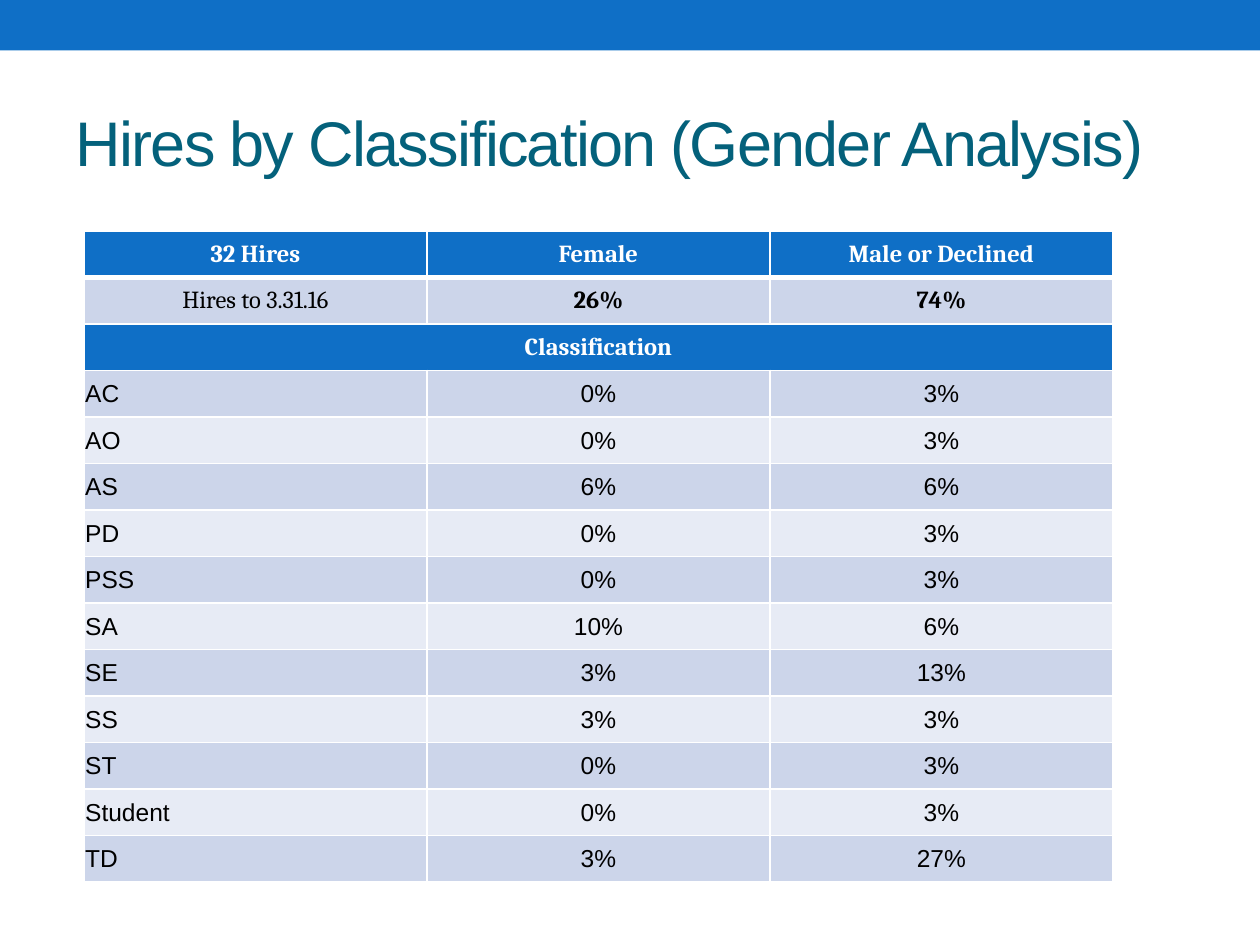
from lxml.etree import SubElement
from pptx import Presentation
from pptx.dml.color import RGBColor
from pptx.enum.shapes import MSO_SHAPE as Shape
from pptx.enum.text import MSO_ANCHOR as Anchor, PP_ALIGN as Align
from pptx.oxml.ns import qn
from pptx.util import Pt

BLUE, TEAL, WHITE, BLACK = "0F6FC6", "04617B", "FFFFFF", "000000"
BANDS = "CCD5EA", "E7EBF5"

HEAD = "32 Hires", "Female", "Male or Declined"
TOTAL = "Hires to 3.31.16", "26%", "74%"
CLASSES = [
    ("AC", "0%", "3%"),
    ("AO", "0%", "3%"),
    ("AS", "6%", "6%"),
    ("PD", "0%", "3%"),
    ("PSS", "0%", "3%"),
    ("SA", "10%", "6%"),
    ("SE", "3%", "13%"),
    ("SS", "3%", "3%"),
    ("ST", "0%", "3%"),
    ("Student", "0%", "3%"),
    ("TD", "3%", "27%"),
]


def rgb(color):
    return RGBColor.from_string(color)


def edge(cell, side, width):
    """Draw one white border (side L, R, T or B); call before filling the cell."""
    line = SubElement(cell._tc.get_or_add_tcPr(), qn(f"a:ln{side}"), w=str(Pt(width)))
    SubElement(SubElement(line, qn("a:solidFill")), qn("a:srgbClr"), val=WHITE)


class Deck:
    """Holds the style and the current slide."""

    sans, serif = "Arial", "Cambria"
    size = 14

    def __init__(self, slide):
        self.slide = slide

    def add_text(self, para, text, size, font, color, bold=False):
        run = para.add_run()
        run.text = text
        run.font.size = Pt(size)
        run.font.name = font
        run.font.bold = bold
        run.font.color.rgb = rgb(color)
        return run

    def bar(self, left, top, width, height, color):
        bar = self.slide.shapes.add_shape(
            Shape.RECTANGLE, Pt(left), Pt(top), Pt(width), Pt(height))
        bar.shadow.inherit = False
        bar.fill.solid()
        bar.fill.fore_color.rgb = rgb(color)
        bar.line.fill.background()

    def title(self, text, left, top, width, height):
        title = self.slide.shapes.title
        title.left, title.top = Pt(left), Pt(top)
        title.width, title.height = Pt(width), Pt(height)
        frame = title.text_frame
        frame.vertical_anchor = Anchor.MIDDLE
        para = frame.paragraphs[0]
        para.alignment = Align.LEFT
        run = self.add_text(para, text, 36, self.sans, TEAL)
        run._r.get_or_add_rPr().set("spc", "-100")

    def grid(self, rows, cols, left, top, width, height):
        table = self.slide.shapes.add_table(
            rows, cols, Pt(left), Pt(top), Pt(width), Pt(height)).table
        for col in table.columns:
            col.width = Pt(width / cols)
        for row in table.rows:
            row.height = Pt(height / rows)
        return table

    def cell(self, cell, text, fill, color=BLACK, bold=False, font=serif,
             align=Align.CENTER, above=1, below=1, tight=False):
        for side, width in zip("LRTB", (1, 1, above, below)):
            edge(cell, side, width)
        cell.fill.solid()
        cell.fill.fore_color.rgb = rgb(fill)
        cell.vertical_anchor = Anchor.MIDDLE
        if tight:
            cell.margin_left = cell.margin_right = cell.margin_top = Pt(0.7)
            cell.margin_bottom = 0
        para = cell.text_frame.paragraphs[0]
        para.alignment = align
        if text:
            self.add_text(para, text, self.size, font, color, bold)


def main():
    show = Presentation()
    show.slide_width, show.slide_height = Pt(720), Pt(540)
    deck = Deck(show.slides.add_slide(show.slide_layouts[5]))

    deck.bar(0, 0, 720, 28.8, BLUE)
    deck.title("Hires by Classification (Gender Analysis)", 36, 42, 648, 78)

    table = deck.grid(3 + len(CLASSES), len(HEAD), 48, 132, 588, 372)
    table.cell(2, 0).merge(table.cell(2, 2))
    for col, text in enumerate(HEAD):
        deck.cell(table.cell(0, col), text, BLUE, WHITE, True, below=3)
    for col, text in enumerate(TOTAL):
        deck.cell(table.cell(1, col), text, BANDS[0], bold=col > 0, above=3)
    for col, text in enumerate(("Classification", "", "")):
        deck.cell(table.cell(2, col), text, BLUE, WHITE, True)
    for row, values in enumerate(CLASSES):
        for col, text in enumerate(values):
            deck.cell(table.cell(row + 3, col), text, BANDS[row % 2],
                      font=deck.sans, tight=True,
                      align=Align.CENTER if col else Align.LEFT)

    show.save("out.pptx")


if __name__ == "__main__":
    main()
